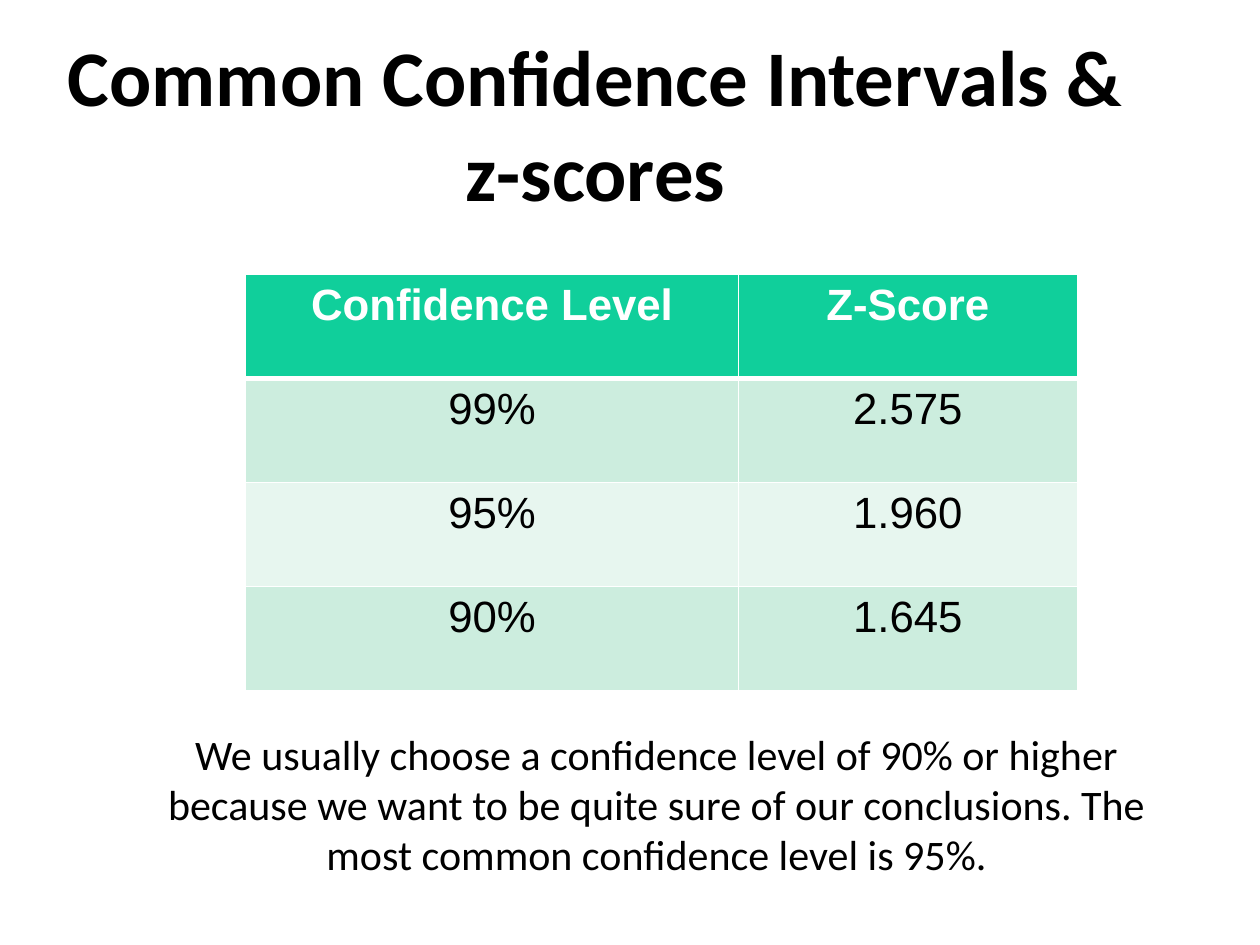
from lxml import etree
from pptx import Presentation
from pptx.dml.color import RGBColor
from pptx.enum.text import MSO_ANCHOR, MSO_AUTO_SIZE, PP_ALIGN
from pptx.oxml.ns import qn
from pptx.util import Inches, Pt

CENTER = PP_ALIGN.CENTER
MIDDLE = MSO_ANCHOR.MIDDLE
NO_FIT = MSO_AUTO_SIZE.NONE
GROW = MSO_AUTO_SIZE.SHAPE_TO_FIT_TEXT

BLACK = RGBColor(0x00, 0x00, 0x00)
WHITE = RGBColor(0xFF, 0xFF, 0xFF)
GREEN = RGBColor(0x10, 0xCF, 0x9B)
BANDS = (RGBColor(0xCC, 0xED, 0xDE), RGBColor(0xE7, 0xF6, 0xEF))

GRID_COLUMNS, GRID_ROWS = 100, 75
TITLE_ONLY = 5
SCORES = [
    ("Confidence Level", "Z-Score"),
    ("99%", "2.575"),
    ("95%", "1.960"),
    ("90%", "1.645"),
]


def write_text(frame, text, *, font, size, color=BLACK, bold=False):
    paragraph = frame.paragraphs[0]
    paragraph.alignment = CENTER
    run = paragraph.add_run()
    run.text = text
    run.font.name = font
    run.font.size = Pt(size)
    run.font.bold = bold
    run.font.color.rgb = color


def add_border(cell, side, width):
    line = etree.SubElement(cell._tc.get_or_add_tcPr(), qn(f"a:ln{side}"), w=str(Pt(width)))
    fill = etree.SubElement(line, qn("a:solidFill"))
    etree.SubElement(fill, qn("a:srgbClr"), val=str(WHITE))


class SlideBuilder:
    """Holds the fonts, the grid and the current slide."""

    heading_font = "Calibri"
    table_font = "Arial"

    def __init__(self, presentation):
        self.column = presentation.slide_width / GRID_COLUMNS
        self.row = presentation.slide_height / GRID_ROWS
        self.slide = presentation.slides.add_slide(presentation.slide_layouts[TITLE_ONLY])

    def place(self, left, top, width, height):
        return (int(left * self.column), int(top * self.row),
                int(width * self.column), int(height * self.row))

    def title(self, text, *area):
        shape = self.slide.shapes.title
        shape.left, shape.top, shape.width, shape.height = self.place(*area)
        frame = shape.text_frame
        frame.word_wrap = True
        frame.auto_size = NO_FIT
        frame.vertical_anchor = MIDDLE
        write_text(frame, text, font=self.heading_font, size=45, bold=True)

    def note(self, text, *area):
        frame = self.slide.shapes.add_textbox(*self.place(*area)).text_frame
        frame.word_wrap = True
        frame.auto_size = GROW
        write_text(frame, text, font=self.heading_font, size=24)

    def table(self, records, column_widths, *area):
        table = self.slide.shapes.add_table(
            len(records), len(column_widths), *self.place(*area)).table
        for column, width in zip(table.columns, column_widths):
            column.width = int(width * self.column)
        for row_index, record in enumerate(records):
            for column_index, text in enumerate(record):
                self.cell(table.cell(row_index, column_index), text, row_index)

    def cell(self, cell, text, row_index):
        header = row_index == 0
        widths = {"L": 1, "R": 1, "T": 3 if row_index == 1 else 1, "B": 3 if header else 1}
        for side, width in widths.items():
            add_border(cell, side, width)
        cell.fill.solid()
        cell.fill.fore_color.rgb = GREEN if header else BANDS[(row_index - 1) % 2]
        write_text(cell.text_frame, text, font=self.table_font, size=25,
                   color=WHITE if header else BLACK, bold=header)


def main():
    presentation = Presentation()
    presentation.slide_width = Inches(10)
    presentation.slide_height = Inches(7.5)
    builder = SlideBuilder(presentation)
    builder.title("Common Confidence Intervals & z-scores", 2, 1.9, 90.5, 15.6)
    builder.table(SCORES, (39.1, 26.9), 19.5, 21.8, 66, 33)
    builder.note(
        "We usually choose a confidence level of 90% or higher because we want to be "
        "quite sure of our conclusions. The most common confidence level is 95%.",
        8.7, 57.3, 86.8, 13.1)
    presentation.save("out.pptx")


if __name__ == "__main__":
    main()
